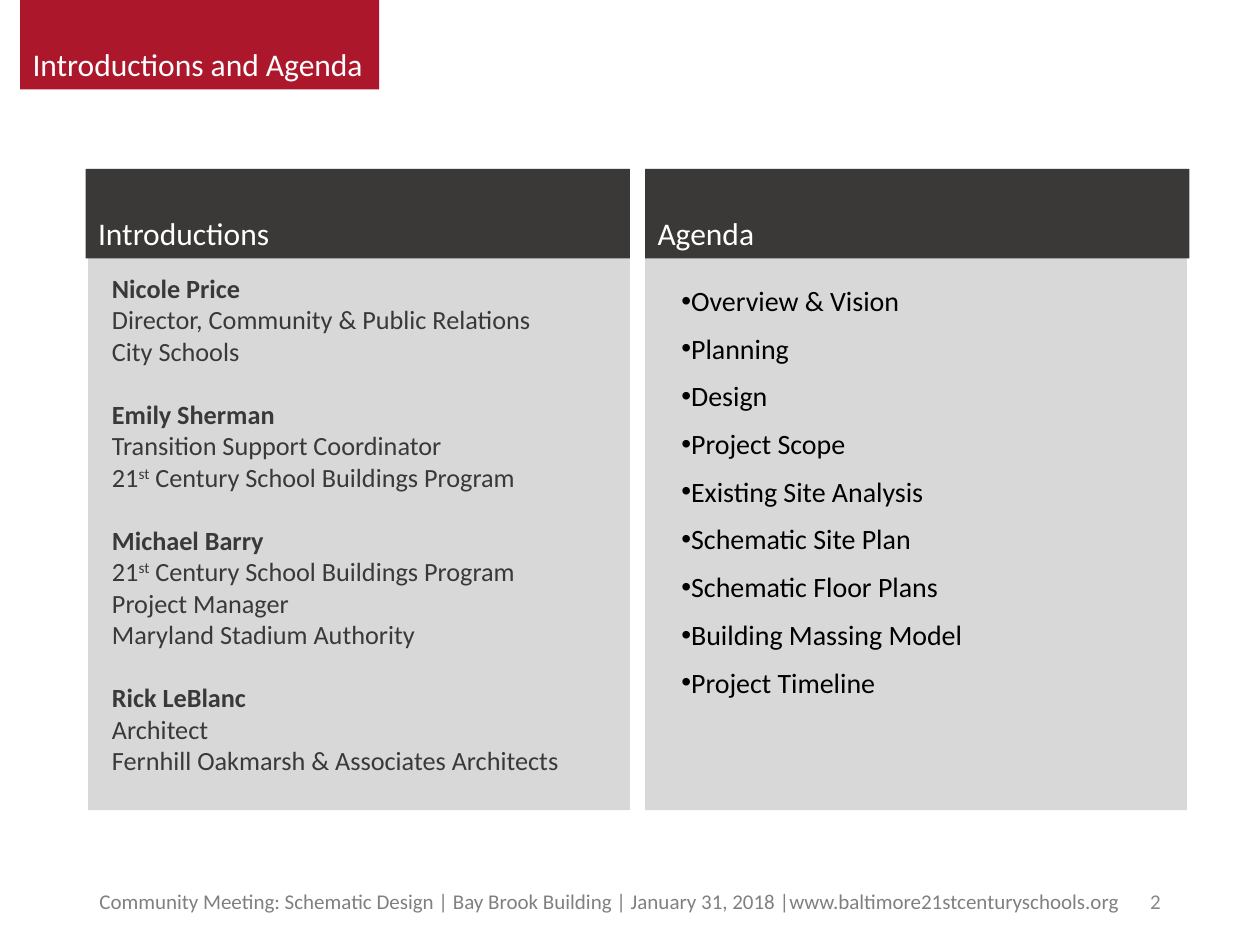
from lxml import etree
from pptx import Presentation
from pptx.dml.color import RGBColor
from pptx.enum.shapes import MSO_SHAPE
from pptx.enum.text import MSO_ANCHOR, PP_ALIGN
from pptx.oxml.ns import qn
from pptx.util import Inches, Pt

RECTANGLE = MSO_SHAPE.RECTANGLE
TOP, MIDDLE, BOTTOM = MSO_ANCHOR.TOP, MSO_ANCHOR.MIDDLE, MSO_ANCHOR.BOTTOM
LEFT, RIGHT = PP_ALIGN.LEFT, PP_ALIGN.RIGHT
RED = RGBColor(0xAC, 0x17, 0x2B)
CHARCOAL = RGBColor(0x3B, 0x38, 0x38)
INK = RGBColor(0x3A, 0x38, 0x38)
PANEL = RGBColor(0xD8, 0xD8, 0xD8)
FOOTER_GRAY = RGBColor(0x80, 0x80, 0x80)
NUMBER_GRAY = RGBColor(0x88, 0x88, 0x88)
WHITE = RGBColor(0xFF, 0xFF, 0xFF)
BLACK = RGBColor(0x00, 0x00, 0x00)

HEADING = {"name": "Calibri", "size": Pt(18)}
PERSON = {"name": "Calibri", "size": Pt(15)}
AGENDA = {"name": "Calibri", "size": Pt(16)}
FOOTER = {"name": "Calibri", "size": Pt(12)}

people = [
    ("Nicole Price", "Director, Community & Public Relations", "City Schools"),
    ("Emily Sherman", "Transition Support Coordinator",
     "21^st^ Century School Buildings Program"),
    ("Michael Barry", "21^st^ Century School Buildings Program",
     "Project Manager", "Maryland Stadium Authority"),
    ("Rick LeBlanc", "Architect", "Fernhill Oakmarsh & Associates Architects"),
]
agenda_items = [
    "Overview & Vision", "Planning", "Design", "Project Scope",
    "Existing Site Analysis", "Schematic Site Plan", "Schematic Floor Plans",
    "Building Massing Model", "Project Timeline",
]


def add_box(left, top, width, height, fill=None, anchor=TOP):
    place = [Inches(value) for value in (left, top, width, height)]
    if fill is None:
        shape = slide.shapes.add_textbox(*place)
    else:
        shape = slide.shapes.add_shape(RECTANGLE, *place)
        shape.shadow.inherit = False
        shape.fill.solid()
        shape.fill.fore_color.rgb = fill
        shape.line.fill.background()
    shape.text_frame.word_wrap = True
    shape.text_frame.vertical_anchor = anchor
    return shape.text_frame


def add_text(paragraph, text, style, color, bold=False, align=LEFT):
    paragraph.alignment = align
    for index, part in enumerate(text.split("^")):
        run = paragraph.add_run()
        run.text = part
        for name, value in style.items():
            setattr(run.font, name, value)
        run.font.bold = bold
        run.font.color.rgb = color
        if index % 2:
            run.font._element.set("baseline", "30000")


presentation = Presentation()
presentation.slide_width = Inches(10)
presentation.slide_height = Inches(7.5)
slide = presentation.slides.add_slide(presentation.slide_layouts[6])

for left in (0.7, 5.12):
    add_box(left, 1.34, 4.3, 5.09, PANEL)

for text, left, top, width, fill in (
    ("Introductions and Agenda", 0.16, 0, 2.85, RED),
    ("Introductions", 0.68, 1.34, 4.32, CHARCOAL),
    ("Agenda", 5.12, 1.34, 4.32, CHARCOAL),
):
    frame = add_box(left, top, width, 0.71, fill, BOTTOM)
    add_text(frame.paragraphs[0], text, HEADING, WHITE)

frame = add_box(0.79, 2.11, 4.09, 4.2)
paragraph = frame.paragraphs[0]
for person_index, lines in enumerate(people):
    for line_index, line in enumerate(lines):
        if person_index or line_index:
            paragraph = frame.add_paragraph()
        if person_index and line_index == 0:
            paragraph.space_before = Pt(18)
        add_text(paragraph, line, PERSON, INK, bold=line_index == 0)

frame = add_box(5.12, 2.23, 3.76, 4.07)
for index, item in enumerate(agenda_items):
    paragraph = frame.add_paragraph() if index else frame.paragraphs[0]
    paragraph.line_spacing = 0.9
    if index:
        paragraph.space_before = Pt(10)
    properties = paragraph._p.get_or_add_pPr()
    properties.set("marL", str(Inches(0.25)))
    properties.set("indent", str(Inches(-0.06)))
    etree.SubElement(properties, qn("a:buFont"), typeface="Arial")
    etree.SubElement(properties, qn("a:buChar"), char="•")
    add_text(paragraph, item, AGENDA, BLACK)

frame = add_box(0.69, 6.95, 8.62, 0.4, anchor=MIDDLE)
add_text(
    frame.paragraphs[0],
    "Community Meeting: Schematic Design | Bay Brook Building | "
    "January 31, 2018 |www.baltimore21stcenturyschools.org",
    FOOTER, FOOTER_GRAY,
)
frame = add_box(8.89, 6.95, 0.42, 0.4, anchor=MIDDLE)
add_text(frame.paragraphs[0], "2", FOOTER, NUMBER_GRAY, align=RIGHT)

presentation.save("out.pptx")
